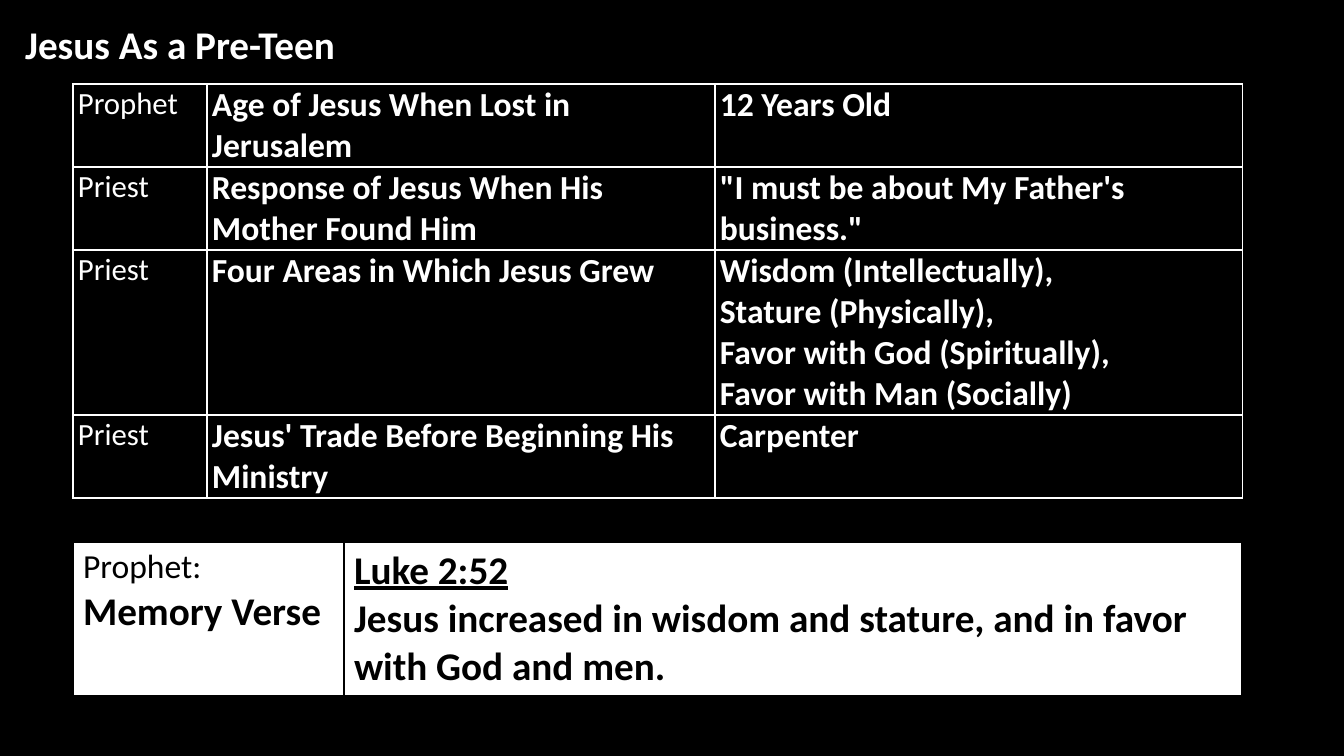
"""Build the slide about Jesus as a pre-teen, with a facts table and a memory verse."""
from lxml.etree import SubElement
from pptx import Presentation
from pptx.dml.color import RGBColor
from pptx.enum.text import MSO_ANCHOR, MSO_AUTO_SIZE, PP_ALIGN
from pptx.oxml.ns import qn
from pptx.util import Pt

PX = 914400 / 100.8
COLORS = {"black": "000000", "white": "FFFFFF"}
LABEL = {"size": Pt(22), "bold": False}
FACT = {"size": Pt(24), "bold": True}
VERSE_LABEL = {"size": Pt(24), "bold": False}
VERSE = {"size": Pt(28), "bold": True}
REFERENCE = {**VERSE, "underline": True}


def write_lines(text_frame, lines, color):
    """Write one paragraph for each pair of text and format."""
    for index, (text, font_format) in enumerate(lines):
        paragraph = text_frame.add_paragraph() if index else text_frame.paragraphs[0]
        run = paragraph.add_run()
        run.text = text
        run.font.color.rgb = RGBColor.from_string(COLORS[color])
        for name, value in {"name": "Calibri", **font_format}.items():
            setattr(run.font, name, value)


def add_grid(slide, box, widths, heights, rows, ink, paper, margins):
    """Add a bordered table whose cells hold lists of formatted lines."""
    frame = slide.shapes.add_table(len(rows), len(widths), *[round(v * PX) for v in box])
    table = frame.table
    table.first_row = table.horz_banding = False
    for column, width in zip(table.columns, widths):
        column.width = round(width * PX)
    for row, height in zip(table.rows, heights):
        row.height = round(height * PX)
    for cell, lines in zip(table.iter_cells(), [lines for row in rows for lines in row]):
        for name, value in margins.items():
            setattr(cell, name, round(value * PX))
        properties = cell._tc.get_or_add_tcPr()
        for side in ("a:lnL", "a:lnR", "a:lnT", "a:lnB"):
            border = SubElement(properties, qn(side), w=str(Pt(1)))
            fill = SubElement(border, qn("a:solidFill"))
            SubElement(fill, qn("a:srgbClr"), val=COLORS[ink])
        cell.fill.solid()
        cell.fill.fore_color.rgb = RGBColor.from_string(COLORS[paper])
        write_lines(cell.text_frame, lines, ink)


presentation = Presentation()
presentation.slide_width = round(1344 * PX)
presentation.slide_height = round(756 * PX)
slide = presentation.slides.add_slide(presentation.slide_layouts[5])
slide.background.fill.solid()
slide.background.fill.fore_color.rgb = RGBColor.from_string(COLORS["black"])

title = slide.shapes.title
for name, value in {"left": 15, "top": 15, "width": 1175, "height": 57}.items():
    setattr(title, name, round(value * PX))
title_format = {"word_wrap": True, "auto_size": MSO_AUTO_SIZE.NONE, "vertical_anchor": MSO_ANCHOR.TOP}
for name, value in title_format.items():
    setattr(title.text_frame, name, value)
write_lines(title.text_frame, [("Jesus As a Pre-Teen", VERSE)], "white")
title.text_frame.paragraphs[0].alignment = PP_ALIGN.LEFT

facts = [
    ("Prophet", "Age of Jesus When Lost in Jerusalem", ["12 Years Old"]),
    ("Priest", "Response of Jesus When His Mother Found Him",
     ["\"I must be about My Father's business.\""]),
    ("Priest", "Four Areas in Which Jesus Grew",
     ["Wisdom (Intellectually),", "Stature (Physically),",
      "Favor with God (Spiritually),", "Favor with Man (Socially)"]),
    ("Priest", "Jesus' Trade Before Beginning His Ministry", ["Carpenter"]),
]
fact_rows = [
    [[(reader, LABEL)], [(question, FACT)], [(answer, FACT) for answer in answers]]
    for reader, question, answers in facts
]
fact_margins = {"margin_left": 5, "margin_top": 1, "margin_right": 1, "margin_bottom": 0}
add_grid(slide, (73, 84, 1170, 408), (134, 508, 528), (82, 82, 162, 82),
         fact_rows, "white", "black", fact_margins)

verse_rows = [[
    [("Prophet:", VERSE_LABEL), ("Memory Verse", VERSE)],
    [("Luke 2:52", REFERENCE),
     ("Jesus increased in wisdom and stature, and in favor with God and men.", VERSE)],
]]
add_grid(slide, (73, 542, 1169, 150), (271, 898), (150,), verse_rows, "black", "white", {})

presentation.save("out.pptx")
